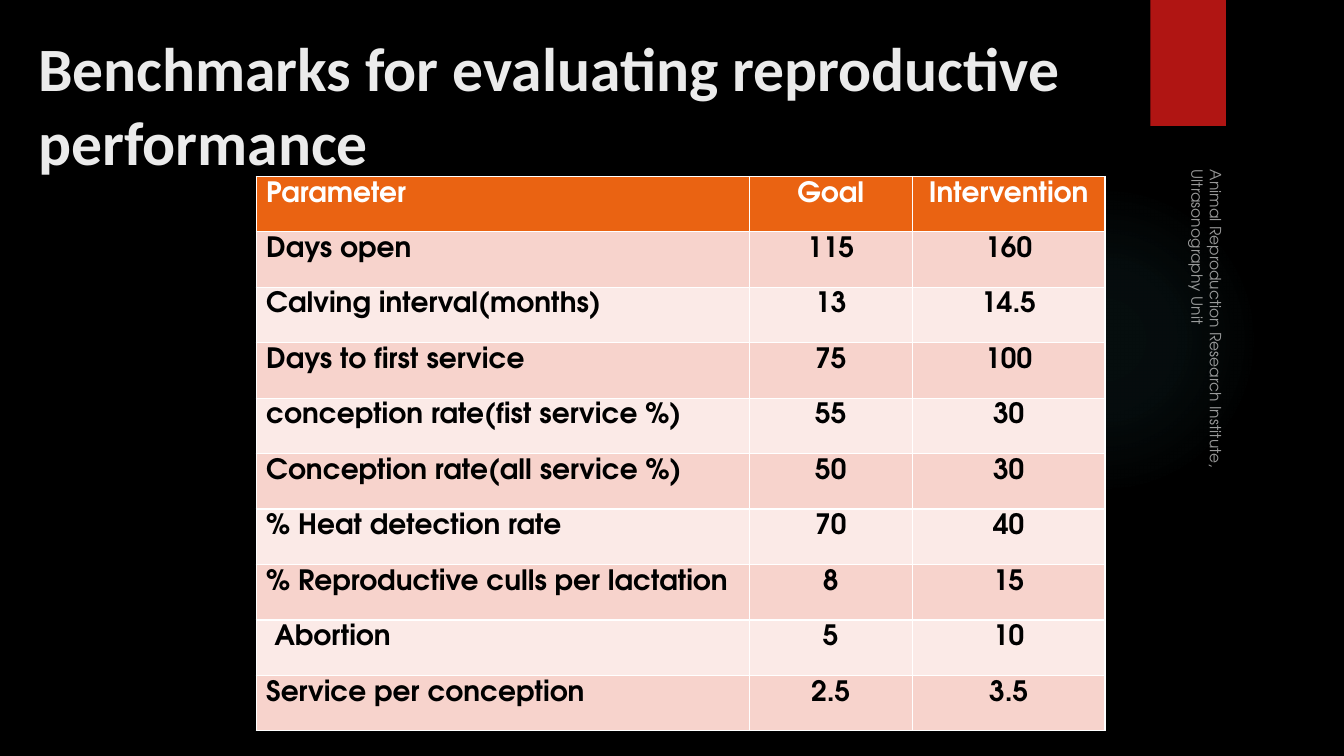
from lxml import etree
from pptx import Presentation
from pptx.dml.color import RGBColor
from pptx.enum import shapes, text
from pptx.oxml import parse_xml
from pptx.oxml.ns import nsdecls, qn
from pptx.util import Inches, Pt


def color(value):
    return RGBColor.from_string(value)


def add_run(paragraph, words, size, face, shade, bold):
    run = paragraph.add_run()
    run.text = words
    run.font.size = Pt(size)
    run.font.name = face
    run.font.bold = bold
    run.font.color.rgb = color(shade)
    return run


BODY_FACE = "TeX Gyre Adventor"
prs = Presentation()
prs.slide_width, prs.slide_height = Inches(13.33), Inches(7.5)
slide = prs.slides.add_slide(prs.slide_layouts[6])
slide.background.fill.solid()
slide.background.fill.fore_color.rgb = color("000000")

glow = slide.shapes.add_shape(shapes.MSO_SHAPE.OVAL, Inches(9.41), Inches(1.83), Inches(3.08), Inches(3.08))
glow.shadow.inherit = False
glow.line.fill.background()
stops = "".join(
    f'<a:gs pos="{position}000"><a:srgbClr val="50B9C1"><a:alpha val="{alpha}000"/></a:srgbClr></a:gs>'
    for position, alpha in [(0, 7), (36, 6), (69, 0)]
)
glow.element.spPr.find(qn("a:prstGeom")).addnext(parse_xml(
    f'<a:gradFill {nsdecls("a")}><a:gsLst>{stops}</a:gsLst><a:path path="circle">'
    '<a:fillToRect l="50000" t="50000" r="50000" b="50000"/></a:path></a:gradFill>'
))

ribbon = slide.shapes.add_shape(shapes.MSO_SHAPE.RECTANGLE, Inches(11.41), 0, Inches(0.75), Inches(1.25))
ribbon.shadow.inherit = False
ribbon.fill.solid()
ribbon.fill.fore_color.rgb = color("B01513")
ribbon.line.fill.background()

title = slide.shapes.add_textbox(Inches(0.28), Inches(0.25), Inches(12.48), Inches(1.31)).text_frame
title.word_wrap = True
add_run(title.paragraphs[0], "Benchmarks for evaluating reproductive performance", 44, "Calibri", "EBEBEB", True)

benchmarks = [
    ("Parameter", "Goal", "Intervention"),
    ("Days open", "115", "160"),
    ("Calving interval(months)", "13", "14.5"),
    ("Days to first service", "75", "100"),
    ("conception rate(fist service %)", "55", "30"),
    ("Conception rate(all service %)", "50", "30"),
    ("% Heat detection rate", "70", "40"),
    ("% Reproductive culls per lactation", "8", "15"),
    ("Abortion", "5", "10"),
    ("Service per conception", "2.5", "3.5"),
]
table = slide.shapes.add_table(
    len(benchmarks), 3, Inches(2.54), Inches(1.75), Inches(8.42), Inches(5.5)
).table
for column, width in zip(table.columns, (4.89, 1.62, 1.91)):
    column.width = Inches(width)

for r, entries in enumerate(benchmarks):
    table.rows[r].height = Inches(0.55)
    for c, entry in enumerate(entries):
        cell = table.cell(r, c)
        cell.margin_top = Inches(0.05)
        cell.margin_left = Inches(0.18 if entry == "Abortion" else 0.1)
        paragraph = cell.text_frame.paragraphs[0]
        if c > 0:
            paragraph.alignment = text.PP_ALIGN.CENTER
        add_run(paragraph, entry, 20, BODY_FACE, "000000" if r else "FFFFFF", True)
        borders = cell._tc.get_or_add_tcPr()
        for side in ("lnL", "lnR", "lnT", "lnB"):
            edge = etree.SubElement(borders, qn(f"a:{side}"), w=str(Pt(1)))
            stroke = etree.SubElement(edge, qn("a:solidFill"))
            etree.SubElement(stroke, qn("a:srgbClr"), val="FFFFFF")
        cell.fill.solid()
        cell.fill.fore_color.rgb = color("EA6312" if r == 0 else ("FBEAE7", "F7D3CC")[r % 2])

institute = slide.shapes.add_textbox(Inches(9.79), Inches(3.53), Inches(4.22), Inches(0.33))
institute.rotation = 90
institute.text_frame.word_wrap = True
institute.text_frame.vertical_anchor = text.MSO_ANCHOR.BOTTOM
credit = add_run(
    institute.text_frame.paragraphs[0],
    "Animal Reproduction Research Institute, Ultrasonography Unit", 11, BODY_FACE, "FFFFFF", False,
)
tint = credit.font._element.find(qn("a:solidFill")).find(qn("a:srgbClr"))
etree.SubElement(tint, qn("a:alpha"), val="60000")

prs.save("out.pptx")
